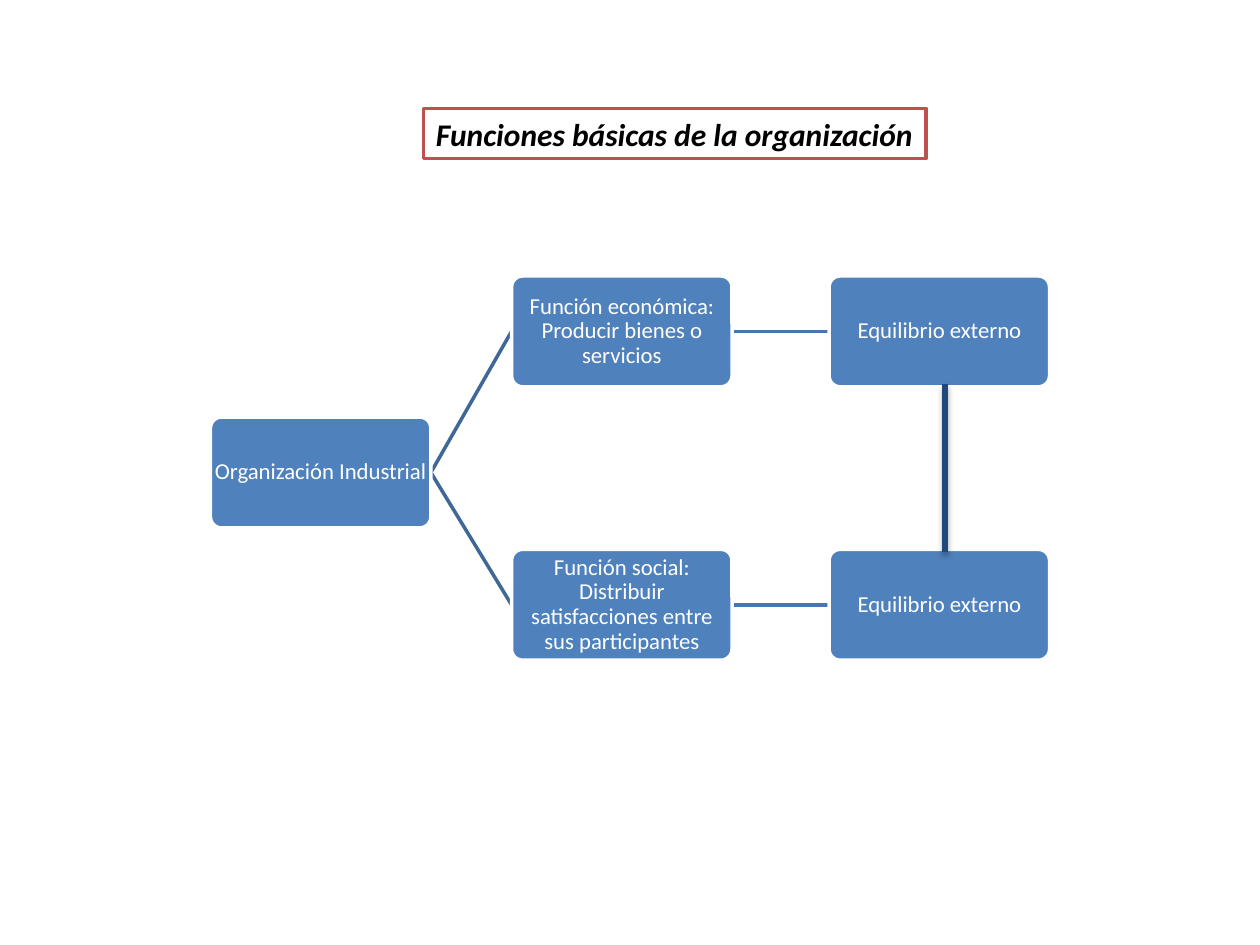
from lxml.etree import SubElement
from pptx import Presentation
from pptx.dml.color import RGBColor
from pptx.enum.shapes import MSO_CONNECTOR, MSO_SHAPE
from pptx.enum.text import MSO_ANCHOR, PP_ALIGN
from pptx.oxml.ns import qn
from pptx.util import Emu, Pt

WHITE = RGBColor(0xFF, 0xFF, 0xFF)
BLACK = RGBColor(0x00, 0x00, 0x00)
BLUE = RGBColor(0x4F, 0x81, 0xBD)
DARK = RGBColor(0x3F, 0x67, 0x97)
MID = RGBColor(0x48, 0x75, 0xAC)
NAVY = RGBColor(0x1F, 0x49, 0x7D)
RED = RGBColor(0xC0, 0x50, 0x4D)
SCALE = 9144
WIDE, HIGH = 175, 88
LEFT, RIGHT = 1, 3


def px(num):
    return Emu(num * SCALE)


class Deck:
    """Hold the style and the current slide of the diagram."""

    def __init__(self):
        self.font = "Calibri"
        self.prs = Presentation()
        self.prs.slide_width, self.prs.slide_height = px(1000), px(750)
        self.slide = self.prs.slides.add_slide(self.prs.slide_layouts[5])

    def paint(self, shape, fill, line):
        shape.fill.solid()
        shape.fill.fore_color.rgb = fill
        shape.line.color.rgb = line
        shape.line.width = Pt(2)

    def run(self, para, text, size, color, strong=False):
        run = para.add_run()
        run.text = text
        font = run.font
        font.name, font.size, font.color.rgb = self.font, Pt(size), color
        font.bold = font.italic = strong

    def title(self, text, x, y, w, h):
        shape = self.slide.shapes.title
        shape.left, shape.top, shape.width, shape.height = map(px, (x, y, w, h))
        self.paint(shape, WHITE, RED)
        frame = shape.text_frame
        frame.word_wrap = False
        para = frame.paragraphs[0]
        para.alignment = PP_ALIGN.LEFT
        self.run(para, text, 18, BLACK, True)

    def box(self, text, x, y):
        shape = self.slide.shapes.add_shape(
            MSO_SHAPE.ROUNDED_RECTANGLE, px(x), px(y), px(WIDE), px(HIGH))
        shape.adjustments[0] = 0.1
        shape.shadow.inherit = False
        self.paint(shape, BLUE, WHITE)
        frame = shape.text_frame
        frame.word_wrap = True
        frame.vertical_anchor = MSO_ANCHOR.MIDDLE
        frame.margin_left = frame.margin_right = px(1)
        frame.margin_top = frame.margin_bottom = px(1)
        para = frame.paragraphs[0]
        para.alignment = PP_ALIGN.CENTER
        para.line_spacing = 0.9
        self.run(para, text, 13, WHITE)
        return shape

    def line(self, color, width, ends=(0, 0, 0, 0)):
        line = self.slide.shapes.add_connector(
            MSO_CONNECTOR.STRAIGHT, *map(px, ends))
        line.line.color.rgb = color
        line.line.width = Pt(width)
        return line, SubElement(line._element.spPr, qn("a:effectLst"))

    def join(self, start, end, color):
        line, _ = self.line(color, 2)
        line.begin_connect(start, RIGHT)
        line.end_connect(end, LEFT)
        self.slide.shapes._spTree.insert(2, line._element)

    def bar(self, *ends):
        _, effect = self.line(NAVY, 3, ends)
        shade = SubElement(effect, qn("a:outerShdw"), blurRad="40000",
                           dist="23000", dir="5400000", rotWithShape="0")
        tint = SubElement(shade, qn("a:srgbClr"), val="000000")
        SubElement(tint, qn("a:alpha"), val="35000")


def main():
    deck = Deck()
    deck.title("Funciones básicas de la organización", 336, 86, 399, 40)
    root = deck.box("Organización Industrial\t", 167, 331)
    rows = (
        (219, "Función económica: Producir bienes o servicios"),
        (436, "Función social: Distribuir satisfacciones entre sus participantes"),
    )
    for top, text in rows:
        task = deck.box(text, 406, top)
        goal = deck.box("Equilibrio externo", 658, top)
        deck.join(root, task, DARK)
        deck.join(task, goal, MID)
    deck.bar(750, 305, 750, 438)
    deck.prs.save("out.pptx")


if __name__ == "__main__":
    main()
